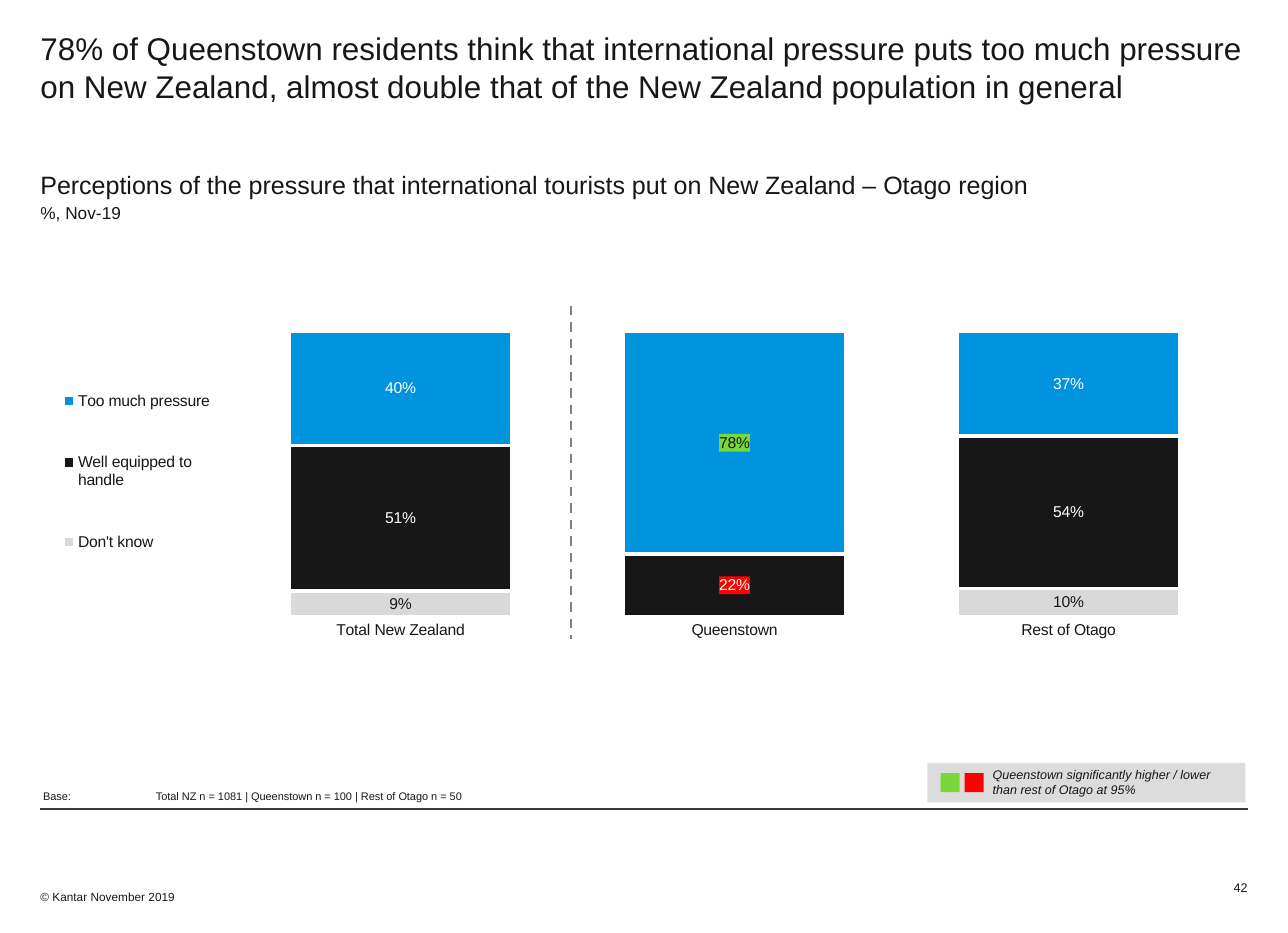
from dataclasses import dataclass

from lxml.etree import SubElement
from pptx import Presentation
from pptx.chart.data import CategoryChartData
from pptx.chart.series import BarSeries
from pptx.dml.color import RGBColor
from pptx.enum.chart import XL_CHART_TYPE, XL_LABEL_POSITION, XL_LEGEND_POSITION, XL_TICK_MARK
from pptx.enum.dml import MSO_LINE
from pptx.enum.shapes import MSO_CONNECTOR, MSO_SHAPE
from pptx.enum.text import MSO_ANCHOR, PP_ALIGN
from pptx.oxml import parse_xml
from pptx.oxml.ns import nsdecls, qn
from pptx.shapes.base import BaseShape
from pptx.slide import Slide
from pptx.text.text import TextFrame
from pptx.util import Cm, Pt

FONT = "Arial"
INK = RGBColor(0x17, 0x17, 0x17)
WHITE = RGBColor(0xFF, 0xFF, 0xFF)
BLUE = RGBColor(0x00, 0x93, 0xDE)
PALE_GREY = RGBColor(0xD9, 0xD9, 0xD9)
KEY_GREY = RGBColor(0xDC, 0xDC, 0xDC)
RULE_GREY = RGBColor(0x3A, 0x3A, 0x3A)
DIVIDER_GREY = RGBColor(0x80, 0x80, 0x80)
HIGHER_GREEN = RGBColor(0x79, 0xD7, 0x38)
LOWER_RED = RGBColor(0xFF, 0x00, 0x00)

LEFT, WIDTH = 0.91, 27.18
CATEGORIES = ("Total New Zealand", "Queenstown", "Rest of Otago")
QUEENSTOWN = CATEGORIES.index("Queenstown")


@dataclass(frozen=True)
class Box:
    left: float
    top: float
    width: float
    height: float

    def lengths(self) -> tuple[Cm, Cm, Cm, Cm]:
        return Cm(self.left), Cm(self.top), Cm(self.width), Cm(self.height)


@dataclass(frozen=True)
class Answer:
    name: str
    shares: tuple[float, ...]
    color: RGBColor
    label_color: RGBColor
    highlight: RGBColor | None = None
    highlight_text: RGBColor = WHITE


ANSWERS = (
    Answer("Don't know", (0.09, 0, 0.10), PALE_GREY, INK),
    Answer("Well equipped to handle", (0.51, 0.22, 0.54), INK, WHITE, LOWER_RED),
    Answer("Too much pressure", (0.40, 0.78, 0.37), BLUE, WHITE, HIGHER_GREEN, INK),
)


def fill_text(frame: TextFrame, lines: list[tuple[str, float]], *, italic: bool = False,
              align: PP_ALIGN = PP_ALIGN.LEFT, anchor: MSO_ANCHOR = MSO_ANCHOR.TOP,
              insets: tuple[float, float, float, float] = (0, 0, 0, 0),
              tab: float | None = None) -> None:
    """Write (text, point size) lines; insets run left, top, right, bottom in cm."""
    frame.word_wrap = True
    frame.vertical_anchor = anchor
    (frame.margin_left, frame.margin_top,
     frame.margin_right, frame.margin_bottom) = map(Cm, insets)
    for index, (text, size) in enumerate(lines):
        paragraph = frame.add_paragraph() if index else frame.paragraphs[0]
        paragraph.text = text
        paragraph.alignment = align
        if index:
            paragraph.space_before = Pt(2)
        if tab is not None:
            tabs = SubElement(paragraph._p.get_or_add_pPr(), qn("a:tabLst"))
            SubElement(tabs, qn("a:tab"), pos=str(Cm(tab)), algn="l")
        font = paragraph.font
        font.name, font.size, font.italic, font.bold = FONT, Pt(size), italic, False
        font.color.rgb = INK


def add_text(slide: Slide, box: Box, lines: list[tuple[str, float]], **text_format) -> None:
    fill_text(slide.shapes.add_textbox(*box.lengths()).text_frame, lines, **text_format)


def add_rectangle(slide: Slide, box: Box, color: RGBColor) -> BaseShape:
    rectangle = slide.shapes.add_shape(MSO_SHAPE.RECTANGLE, *box.lengths())
    rectangle.shadow.inherit = False
    rectangle.fill.solid()
    rectangle.fill.fore_color.rgb = color
    rectangle.line.fill.background()
    return rectangle


def add_line(slide: Slide, start: tuple[float, float], end: tuple[float, float],
             color: RGBColor, weight: float, dash: MSO_LINE = MSO_LINE.SOLID) -> None:
    line = slide.shapes.add_connector(MSO_CONNECTOR.STRAIGHT, *map(Cm, start + end))
    line.line.color.rgb = color
    line.line.width = Pt(weight)
    line.line.dash_style = dash
    SubElement(line._element.spPr, qn("a:effectLst"))


def manual_layout(left: float, top: float, width: float, height: float, inner: bool = False):
    """Return a chart layout element given in fractions of the chart area."""
    target = '<c:layoutTarget val="inner"/>' if inner else ""
    return parse_xml(
        f'<c:layout {nsdecls("c")}><c:manualLayout>{target}'
        '<c:xMode val="edge"/><c:yMode val="edge"/>'
        f'<c:x val="{left}"/><c:y val="{top}"/><c:w val="{width}"/><c:h val="{height}"/>'
        '</c:manualLayout></c:layout>')


def highlight_label(series: BarSeries, answer: Answer) -> None:
    label = series.points[QUEENSTOWN].data_label
    label.font.name, label.font.size = FONT, Pt(10)
    label.font.color.rgb = answer.highlight_text
    label.position = XL_LABEL_POSITION.CENTER
    text_properties = series._element.find(".//" + qn("c:dLbl") + "/" + qn("c:txPr"))
    text_properties.addprevious(parse_xml(
        f'<c:spPr {nsdecls("c", "a")}><a:solidFill>'
        f'<a:srgbClr val="{answer.highlight}"/></a:solidFill></c:spPr>'))


def format_series(series: BarSeries, answer: Answer) -> None:
    series.format.fill.solid()
    series.format.fill.fore_color.rgb = answer.color
    series.format.line.color.rgb = WHITE
    series.format.line.width = Pt(2.25)
    labels = series.data_labels
    labels.show_value = True
    labels.number_format, labels.number_format_is_linked = "0%;;", False
    labels.position = XL_LABEL_POSITION.CENTER
    labels.font.name, labels.font.size = FONT, Pt(10)
    labels.font.color.rgb = answer.label_color
    if answer.highlight is not None:
        highlight_label(series, answer)


def add_pressure_chart(slide: Slide, box: Box) -> None:
    data = CategoryChartData(number_format="0%")
    data.categories = CATEGORIES
    for answer in ANSWERS:
        data.add_series(answer.name, answer.shares)
    chart = slide.shapes.add_chart(
        XL_CHART_TYPE.COLUMN_STACKED_100, *box.lengths(), data).chart
    chart.has_title = False
    chart.font.name, chart.font.size, chart.font.color.rgb = FONT, Pt(10), INK
    plot = chart.plots[0]
    plot.gap_width, plot.overlap, plot.vary_by_categories = 50, 100, False
    for series, answer in zip(plot.series, ANSWERS):
        format_series(series, answer)
    chart.value_axis.visible = False
    chart.value_axis.has_major_gridlines = False
    chart.value_axis.maximum_scale = 1
    chart.category_axis.major_tick_mark = XL_TICK_MARK.NONE
    chart.category_axis.format.line.fill.background()
    chart.has_legend = True
    legend = chart.legend
    legend.position, legend.include_in_layout = XL_LEGEND_POSITION.LEFT, False
    legend.font.name, legend.font.size, legend.font.color.rgb = FONT, Pt(10), INK
    for old_layout in legend._element.findall(qn("c:layout")):
        legend._element.remove(old_layout)
    legend._element.find(qn("c:legendPos")).addnext(manual_layout(0.01, 0.19, 0.14, 0.45))
    plot_area = chart._chartSpace.chart.plotArea
    for old_layout in plot_area.findall(qn("c:layout")):
        plot_area.remove(old_layout)
    plot_area.insert(0, manual_layout(0.16, 0.16, 0.83, 0.52, inner=True))


def add_significance_key(slide: Slide) -> None:
    add_rectangle(slide, Box(20.88, 17.17, 7.16, 0.89), KEY_GREY)
    for index, color in enumerate((HIGHER_GREEN, LOWER_RED)):
        add_rectangle(slide, Box(21.18 + 0.54 * index, 17.4, 0.43, 0.43), color)
    add_text(slide, Box(22.25, 17.17, 5.44, 0.89),
             [("Queenstown significantly higher / lower than rest of Otago at 95%", 8)],
             italic=True, insets=(0.1, 0.1, 0.1, 0.1))


def main() -> None:
    presentation = Presentation()
    presentation.slide_width, presentation.slide_height = Cm(29), Cm(21)
    slide = presentation.slides.add_slide(presentation.slide_layouts.get_by_name("Title Only"))

    title = slide.shapes.title
    title.left, title.top, title.width, title.height = Box(LEFT, 0, WIDTH, 3.15).lengths()
    fill_text(title.text_frame, [(
        "78% of Queenstown residents think that international pressure puts too much pressure "
        "on New Zealand, almost double that of the New Zealand population in general", 20)],
        insets=(0, 0.66, 0, 0))
    add_text(slide, Box(LEFT, 3.15, WIDTH, 2.34), [
        ("Perceptions of the pressure that international tourists put on New Zealand – Otago region", 16),
        ("%, Nov-19", 11)], insets=(0, 0.66, 0, 0))

    add_pressure_chart(slide, Box(LEFT, 5.49, WIDTH, 12.34))
    add_line(slide, (12.85, 6.88), (12.85, 14.38), DIVIDER_GREY, 1.5, MSO_LINE.DASH)
    add_significance_key(slide)

    add_text(slide, Box(0.97, 17.4, 19.91, 0.66),
             [("Base:\tTotal NZ n = 1081 | Queenstown n = 100 | Rest of Otago n = 50", 7)],
             anchor=MSO_ANCHOR.BOTTOM, tab=2.54)
    add_line(slide, (0.9, 18.21), (28.09, 18.21), RULE_GREY, 0.75)
    add_text(slide, Box(LEFT, 19.43, 7.06, 1.47), [("© Kantar November 2019", 7.5)],
             anchor=MSO_ANCHOR.BOTTOM, insets=(0, 0, 0, 0.79))
    add_text(slide, Box(26.49, 19.38, 1.6, 0.76), [("42", 8)],
             align=PP_ALIGN.RIGHT, anchor=MSO_ANCHOR.BOTTOM)
    presentation.save("out.pptx")


if __name__ == "__main__":
    main()
